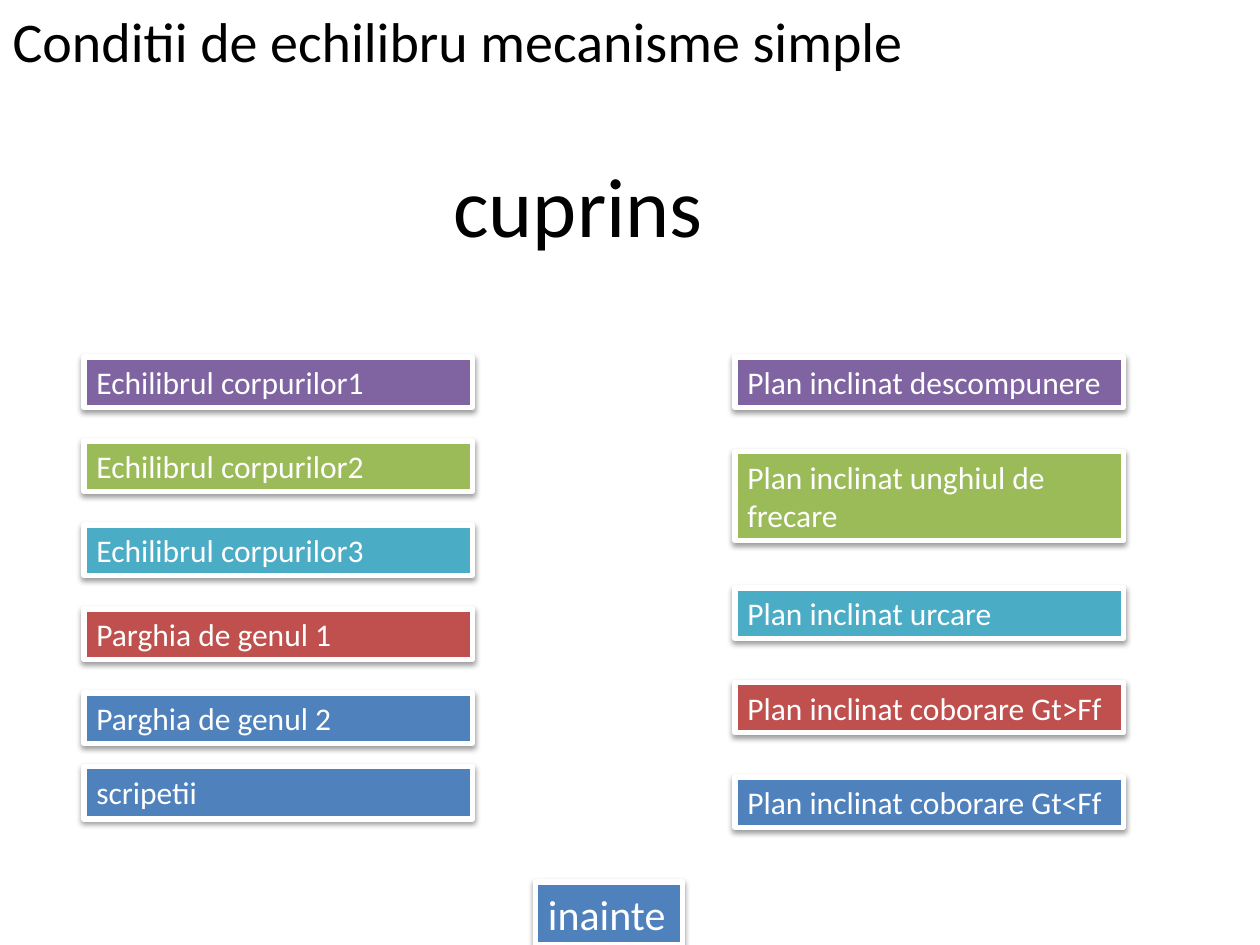
import pptx
import pptx.dml.color
import pptx.enum.shapes
import pptx.enum.text
import pptx.oxml
import pptx.oxml.ns
import pptx.util

FONT = "Calibri"
COLOURS = {
    "black": "000000",
    "white": "FFFFFF",
    "purple": "8064A2",
    "green": "9BBB59",
    "teal": "4BACC6",
    "red": "C0504D",
    "blue": "4F81BD",
}

# The slide is a grid of 120 columns by 90 rows, twelve to the inch
UNIT = pptx.util.Inches(1) // 12
COLUMNS, ROWS = 120, 90
BUTTON_WIDTH, BUTTON_HEIGHT = 37, 4.8
FIRST_ROW = 34

# Each column of buttons: left edge, row step, entries in order
LEFT_MENU = (8, 8, [
    ("Echilibrul corpurilor1", "purple"),
    ("Echilibrul corpurilor2", "green"),
    ("Echilibrul corpurilor3", "teal"),
    ("Parghia de genul 1", "red"),
    ("Parghia de genul 2", "blue"),
])
RIGHT_MENU_LEFT = 70
RIGHT_MENU = [
    ("Plan inclinat descompunere", "purple", 34, BUTTON_HEIGHT),
    ("Plan inclinat unghiul de frecare", "green", 43, 8.5),
    ("Plan inclinat urcare", "teal", 56, BUTTON_HEIGHT),
    ("Plan inclinat coborare Gt>Ff", "red", 65, BUTTON_HEIGHT),
    ("Plan inclinat coborare Gt<Ff", "blue", 74, BUTTON_HEIGHT),
]


def colour(name):
    return pptx.dml.color.RGBColor.from_string(COLOURS[name])


def grid(*lengths):
    return [round(length * UNIT) for length in lengths]


def write_text(shape, text, size, colour_name):
    frame = shape.text_frame
    frame.word_wrap = True
    frame.auto_size = pptx.enum.text.MSO_AUTO_SIZE.SHAPE_TO_FIT_TEXT
    frame.vertical_anchor = pptx.enum.text.MSO_ANCHOR.TOP
    paragraph = frame.paragraphs[0]
    paragraph.alignment = pptx.enum.text.PP_ALIGN.LEFT
    run = paragraph.add_run()
    run.text = text
    run.font.name = FONT
    run.font.size = pptx.util.Pt(size)
    run.font.color.rgb = colour(colour_name)


def add_shadow(shape):
    shape.shadow.inherit = False
    effects = shape._element.spPr.find(pptx.oxml.ns.qn("a:effectLst"))
    effects.append(pptx.oxml.parse_xml(
        f'<a:outerShdw {pptx.oxml.ns.nsdecls("a")} blurRad="{pptx.util.Pt(3.1)}" '
        f'dist="{pptx.util.Pt(1.6)}" dir="5400000" rotWithShape="0">'
        f'<a:srgbClr val="{COLOURS["black"]}"><a:alpha val="38000"/></a:srgbClr>'
        '</a:outerShdw>'))


def add_title(slide, text):
    title = slide.shapes.title
    title.left, title.top, title.width, title.height = grid(0, 0, COLUMNS, 7.7)
    write_text(title, text, 32, "black")


def add_heading(slide, text):
    heading = slide.shapes.add_textbox(*grid(42, 14, 57, 10.9))
    write_text(heading, text, 48, "black")


def add_button(slide, text, fill, left, top,
               width=BUTTON_WIDTH, height=BUTTON_HEIGHT, size=18):
    button = slide.shapes.add_shape(
        pptx.enum.shapes.MSO_SHAPE.RECTANGLE, *grid(left, top, width, height))
    button.fill.solid()
    button.fill.fore_color.rgb = colour(fill)
    button.line.color.rgb = colour("white")
    button.line.width = pptx.util.Pt(3)
    add_shadow(button)
    write_text(button, text, size, "white")


def main():
    presentation = pptx.Presentation()
    presentation.slide_width, presentation.slide_height = grid(COLUMNS, ROWS)
    slide = presentation.slides.add_slide(presentation.slide_layouts[5])

    # Headings
    add_title(slide, "Conditii de echilibru mecanisme simple")
    add_heading(slide, "cuprins")

    # Left menu, with its last entry set closer
    left, step, entries = LEFT_MENU
    for index, (text, fill) in enumerate(entries):
        add_button(slide, text, fill, left, FIRST_ROW + index * step)
    add_button(slide, "scripetii", "blue", left, 73, height=5)

    # Right menu
    for text, fill, top, height in RIGHT_MENU:
        add_button(slide, text, fill, RIGHT_MENU_LEFT, top, height=height)

    # Forward button
    add_button(slide, "inainte", "blue", 51, 84, width=14, height=6, size=24)

    presentation.save("out.pptx")


if __name__ == "__main__":
    main()
